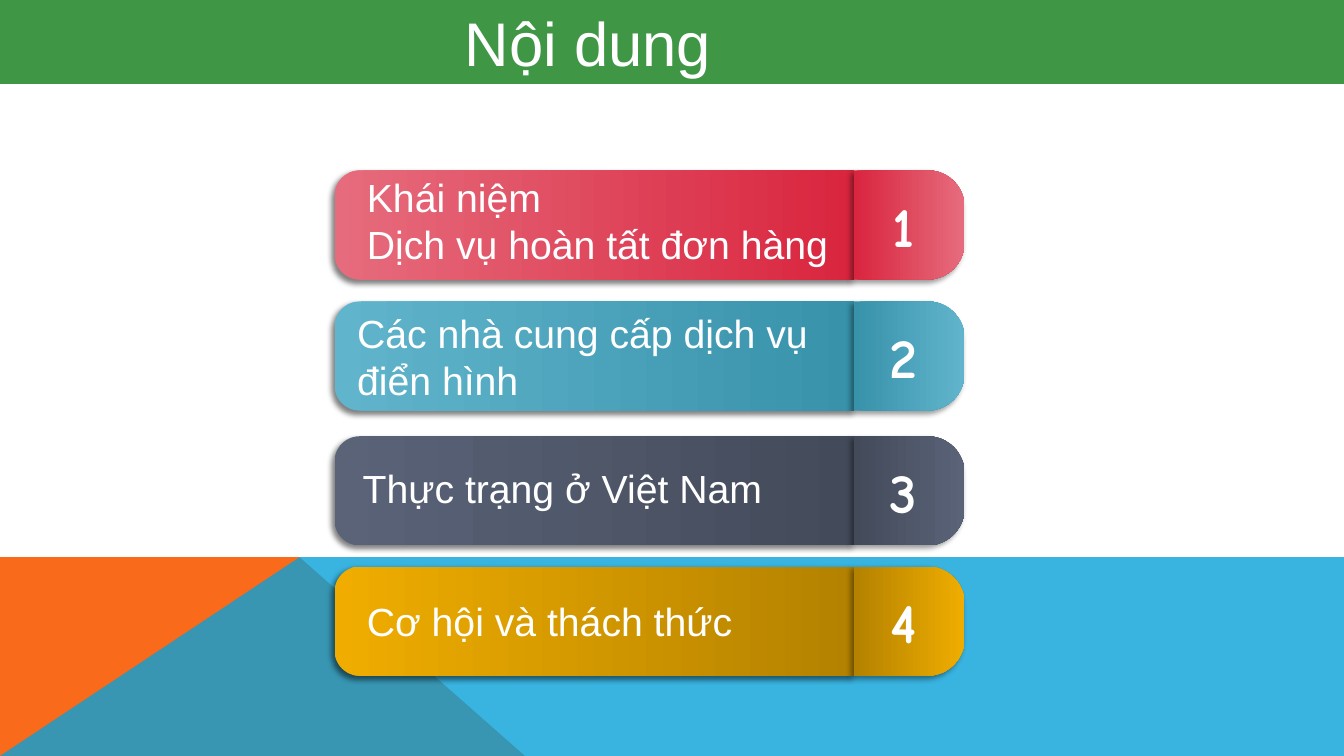
from lxml import etree
from pptx import Presentation
from pptx.dml.color import RGBColor
from pptx.enum.shapes import MSO_SHAPE
from pptx.enum.text import MSO_ANCHOR, MSO_AUTO_SIZE, PP_ALIGN
from pptx.oxml.ns import qn
from pptx.util import Pt

ROUND_TOP = MSO_SHAPE.ROUND_2_SAME_RECTANGLE
MIDDLE = MSO_ANCHOR.MIDDLE
LEFT, CENTER = PP_ALIGN.LEFT, PP_ALIGN.CENTER
NO_FIT = MSO_AUTO_SIZE.NONE

WIDTH, HEIGHT = 960, 540
BAR_X, BAR_W, TAB_W, ROW_H = 239, 371, 79, 78

# top, light colour, dark colour, label lines, label offset (x, y)
ROWS = [
    (121.7, "E66C7D", "D9253E", ["Khái niệm", "Dịch vụ hoàn tất đơn hàng"], (16, -3)),
    (215.3, "60B5CC", "3792AA", ["Các nhà cung cấp dịch vụ điển hình"], (9, 0)),
    (311.6, "5A6378", "434A5A", ["Thực trạng ở Việt Nam"], (13, -2)),
    (404.7, "F0AD00", "B48200", ["Cơ hội và thách thức"], (16, 0)),
]


def rgb(value):
    return RGBColor.from_string(value)


def style(p, font, size, align, bold=False):
    p.alignment = align
    p.font.name = font
    p.font.size = Pt(size)
    p.font.bold = bold
    p.font.color.rgb = rgb("FFFFFF")


def add_label(s, x, y, w, h, lines, font, size, align=LEFT, bold=False, wrap=True):
    tf = s.shapes.add_textbox(Pt(x), Pt(y), Pt(w), Pt(h)).text_frame
    tf.word_wrap = wrap
    tf.vertical_anchor = MIDDLE
    tf.text = "\n".join(lines)
    for p in tf.paragraphs:
        style(p, font, size, align, bold)


def add_polygon(s, points, color, opacity=100):
    builder = s.shapes.build_freeform(*points[0], scale=Pt(1))
    builder.add_line_segments(points[1:])
    sp = builder.convert_to_shape()
    sp.shadow.inherit = False
    sp.line.fill.background()
    sp.fill.solid()
    sp.fill.fore_color.rgb = rgb(color)
    if opacity < 100:
        clr = sp._element.spPr.find(".//" + qn("a:srgbClr"))
        etree.SubElement(clr, qn("a:alpha"), val=str(opacity * 1000))


def add_shadow(sp, opacity):
    sp.shadow.inherit = False
    effects = sp._element.spPr.find(qn("a:effectLst"))
    shadow = etree.SubElement(effects, qn("a:outerShdw"), blurRad=str(Pt(4)),
                              dist=str(Pt(3)), dir="8100000", rotWithShape="0")
    clr = etree.SubElement(shadow, qn("a:srgbClr"), val="000000")
    etree.SubElement(clr, qn("a:alpha"), val=str(opacity * 1000))


def add_sideways(s, x, y, w, h, rotation, radius, colors, angle, opacity):
    """Fill the box with a quarter-turned shape whose outer end is rounded."""
    sp = s.shapes.add_shape(ROUND_TOP, Pt(x + (w - h) / 2), Pt(y + (h - w) / 2),
                            Pt(h), Pt(w))
    sp.rotation = rotation
    sp.adjustments[0] = radius
    sp.line.fill.background()
    sp.fill.gradient()
    sp.fill.gradient_angle = angle
    for stop, color, position in zip(sp.fill.gradient_stops, colors, (0, 1)):
        stop.color.rgb = rgb(color)
        stop.position = position
    add_shadow(sp, opacity)


def add_background(s, y):
    peak = (214, y)
    add_polygon(s, [(0, HEIGHT), (0, y), peak, (375, HEIGHT)], "F96A1B")
    add_polygon(s, [(0, HEIGHT), peak, (WIDTH, y), (WIDTH, HEIGHT)], "08A1D9", 80)


def add_title(s, x, y, w, h):
    title = s.shapes.title
    title.left, title.top, title.width, title.height = Pt(x), Pt(y), Pt(w), Pt(h)
    title.fill.solid()
    title.fill.fore_color.rgb = rgb("3F9745")
    tf = title.text_frame
    tf.auto_size = NO_FIT
    tf.margin_left = Pt(332)
    tf.vertical_anchor = MIDDLE
    tf.text = "Nội dung"
    style(tf.paragraphs[0], "Arial", 44, LEFT)


def add_row(s, x, y, number, light, dark, lines, offset):
    tab_x = x + BAR_W
    # Bar and number tab
    add_sideways(s, x, y, BAR_W, ROW_H, 270, 0.23, (light, dark), 270, 50)
    add_sideways(s, tab_x, y, TAB_W, ROW_H, 90, 0.34, (dark, light), 90, 40)
    # Number and label
    add_label(s, tab_x + 16, y, 39, ROW_H, [str(number)], "Comic Neue", 40,
              CENTER, bold=True, wrap=False)
    dx, dy = offset
    add_label(s, x + dx, y + dy, 351, ROW_H, lines, "Arial", 28)


def main():
    prs = Presentation()
    prs.slide_width, prs.slide_height = Pt(WIDTH), Pt(HEIGHT)
    s = prs.slides.add_slide(prs.slide_layouts[5])
    add_background(s, 397.5)
    add_title(s, 0, -0.5, WIDTH, 60.5)
    for number, (top, *content) in enumerate(ROWS, 1):
        add_row(s, BAR_X, top, number, *content)
    prs.save("out.pptx")


if __name__ == "__main__":
    main()
